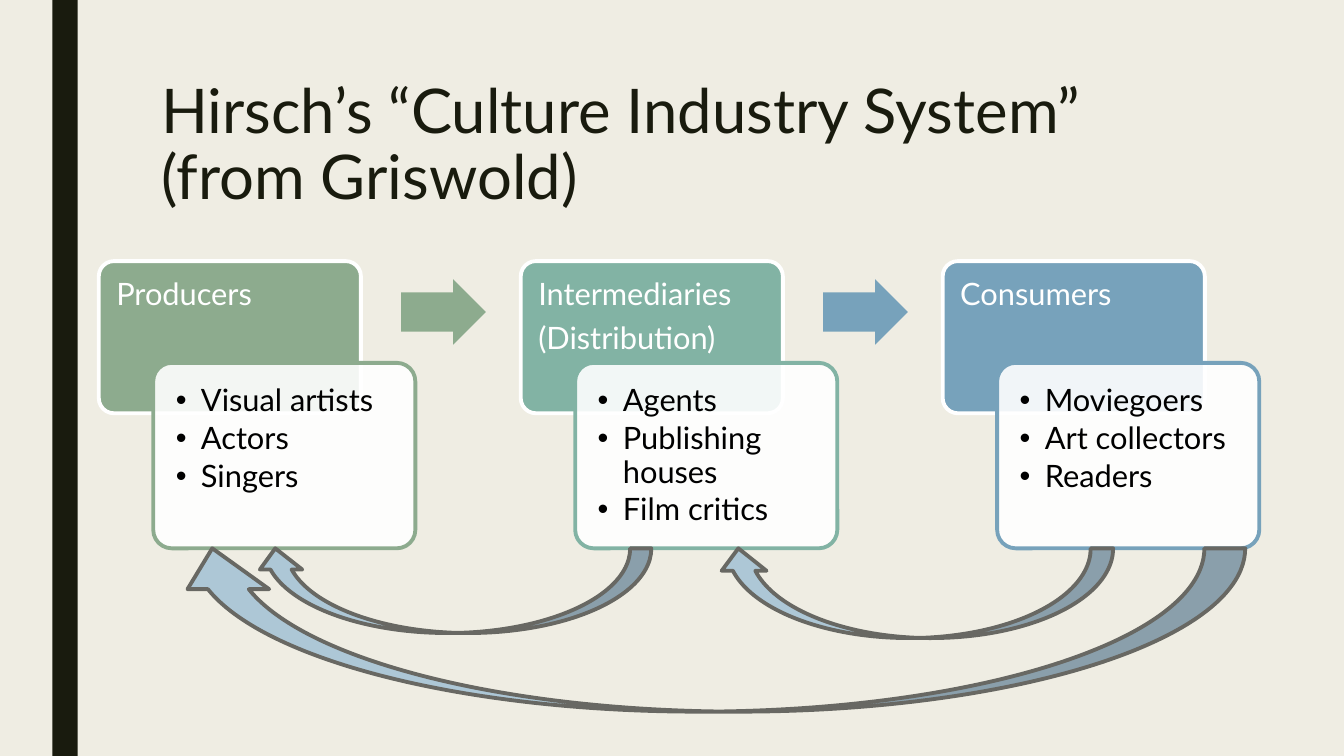
from dataclasses import dataclass

from lxml.etree import SubElement
from pptx import Presentation
from pptx.dml.color import RGBColor
from pptx.enum.shapes import MSO_SHAPE
from pptx.enum.text import MSO_ANCHOR, MSO_AUTO_SIZE, PP_ALIGN
from pptx.oxml.ns import qn
from pptx.util import Inches, Pt

TITLE = "Hirsch’s “Culture Industry System” (from Griswold)"
STAGES = [
    (["Producers"], ["Visual artists", "Actors", "Singers"], "8DAB8E"),
    (["Intermediaries", "(Distribution)"], ["Agents", "Publishing houses", "Film critics"], "82B3A4"),
    (["Consumers"], ["Moviegoers", "Art collectors", "Readers"], "77A2BB"),
]
FEEDBACK_ARROWS = [
    (2.52, 5.44, 3.94, 0.84),
    (7.1, 5.44, 3.94, 0.89),
    (1.7, 5.44, 10.65, 1.62),
]
STAGE_LEFT, STAGE_TOP, STAGE_PITCH = 0.98, 2.59, 4.185
STAGE_WIDTH, HEADER_HEIGHT, CARD_HEIGHT = 2.6, 1.51, 1.84
CARD_SHIFT_X, CARD_SHIFT_Y = 0.54, 1.01
ARROW_SHIFT_X, ARROW_SHIFT_Y = 3.0, 0.18
ARROW_WIDTH, ARROW_HEIGHT = 0.84, 0.65


@dataclass(frozen=True)
class Theme:
    font: str = "Lato"
    background: str = "EFEDE3"
    dark: str = "191B0E"
    white: str = "FFFFFF"
    black: str = "000000"
    feedback_fill: str = "ADC7D6"
    feedback_line: str = "686863"
    title_size: int = 44
    body_size: int = 22
    line_width: float = 2.75


THEME = Theme()


def rgb(value):
    return RGBColor.from_string(value)


def add_block(page, kind, bounds, fill, line=None):
    block = page.shapes.add_shape(kind, *map(Inches, bounds))
    block.shadow.inherit = False
    block.fill.solid()
    block.fill.fore_color.rgb = rgb(fill)
    if line:
        block.line.color.rgb = rgb(line)
        block.line.width = Pt(THEME.line_width)
    else:
        block.line.fill.background()
    return block


def write_text(box, lines, size, color, spacing=0.9, after=0):
    frame = box.text_frame
    frame.word_wrap = True
    frame.auto_size = MSO_AUTO_SIZE.NONE
    frame.vertical_anchor = MSO_ANCHOR.TOP
    frame.text = "\n".join(lines)
    for para in frame.paragraphs:
        para.alignment = PP_ALIGN.LEFT
        para.line_spacing = spacing
        para.space_before = Pt(0)
        para.space_after = Pt(after)
        for span in para.runs:
            span.font.name = THEME.font
            span.font.size = Pt(size)
            span.font.color.rgb = rgb(color)


def set_insets(box, inset):
    frame = box.text_frame
    frame.margin_left = frame.margin_top = Inches(inset)
    frame.margin_right = frame.margin_bottom = Inches(inset)


def add_bullets(box):
    for para in box.text_frame.paragraphs:
        properties = para._p.get_or_add_pPr()
        properties.set("marL", str(Inches(0.25)))
        properties.set("indent", str(-Inches(0.25)))
        SubElement(properties, qn("a:buFont")).set("typeface", "Arial")
        SubElement(properties, qn("a:buChar")).set("char", "•")


def set_opacity(shape, percent):
    color = shape.fill._xPr.find(qn("a:solidFill"))[0]
    SubElement(color, qn("a:alpha")).set("val", str(percent * 1000))


def add_stage(page, left, heading, examples, color):
    header_bounds = (left, STAGE_TOP, STAGE_WIDTH, HEADER_HEIGHT)
    header = add_block(page, MSO_SHAPE.ROUNDED_RECTANGLE, header_bounds, color, THEME.white)
    card_bounds = (left + CARD_SHIFT_X, STAGE_TOP + CARD_SHIFT_Y, STAGE_WIDTH, CARD_HEIGHT)
    card = add_block(page, MSO_SHAPE.ROUNDED_RECTANGLE, card_bounds, THEME.white, color)
    set_opacity(card, 90)
    for box, inset in ((header, 0.13), (card, 0.17)):
        box.adjustments[0] = 0.1
        set_insets(box, inset)
    write_text(header, heading, THEME.body_size, THEME.white, after=7.7)
    write_text(card, examples, THEME.body_size, THEME.black, after=3.3)
    add_bullets(card)


def add_flow_arrow(page, left, color):
    bounds = (left + ARROW_SHIFT_X, STAGE_TOP + ARROW_SHIFT_Y, ARROW_WIDTH, ARROW_HEIGHT)
    arrow = add_block(page, MSO_SHAPE.RIGHT_ARROW, bounds, color)
    arrow.adjustments[0] = 0.6
    arrow.adjustments[1] = 0.5


def main():
    deck = Presentation()
    deck.slide_width, deck.slide_height = Inches(13.33), Inches(7.5)
    page = deck.slides.add_slide(deck.slide_layouts[5])
    page.background.fill.solid()
    page.background.fill.fore_color.rgb = rgb(THEME.background)
    add_block(page, MSO_SHAPE.RECTANGLE, (0.52, 0, 0.25, 7.5), THEME.dark)

    title = page.shapes.title
    title.left, title.top, title.width, title.height = map(Inches, (1.5, 0.75, 10.5, 1.62))
    write_text(title, [TITLE], THEME.title_size, THEME.dark, spacing=0.89)

    for index, (heading, examples, color) in enumerate(STAGES):
        left = STAGE_LEFT + index * STAGE_PITCH
        if index:
            arrow_color = STAGES[0][2] if index == 1 else color
            add_flow_arrow(page, left - STAGE_PITCH, arrow_color)
        add_stage(page, left, heading, examples, color)

    for bounds in FEEDBACK_ARROWS:
        arrow = add_block(page, MSO_SHAPE.CURVED_DOWN_ARROW, bounds, THEME.feedback_fill, THEME.feedback_line)
        arrow.rotation = 180

    deck.save("out.pptx")


if __name__ == "__main__":
    main()
